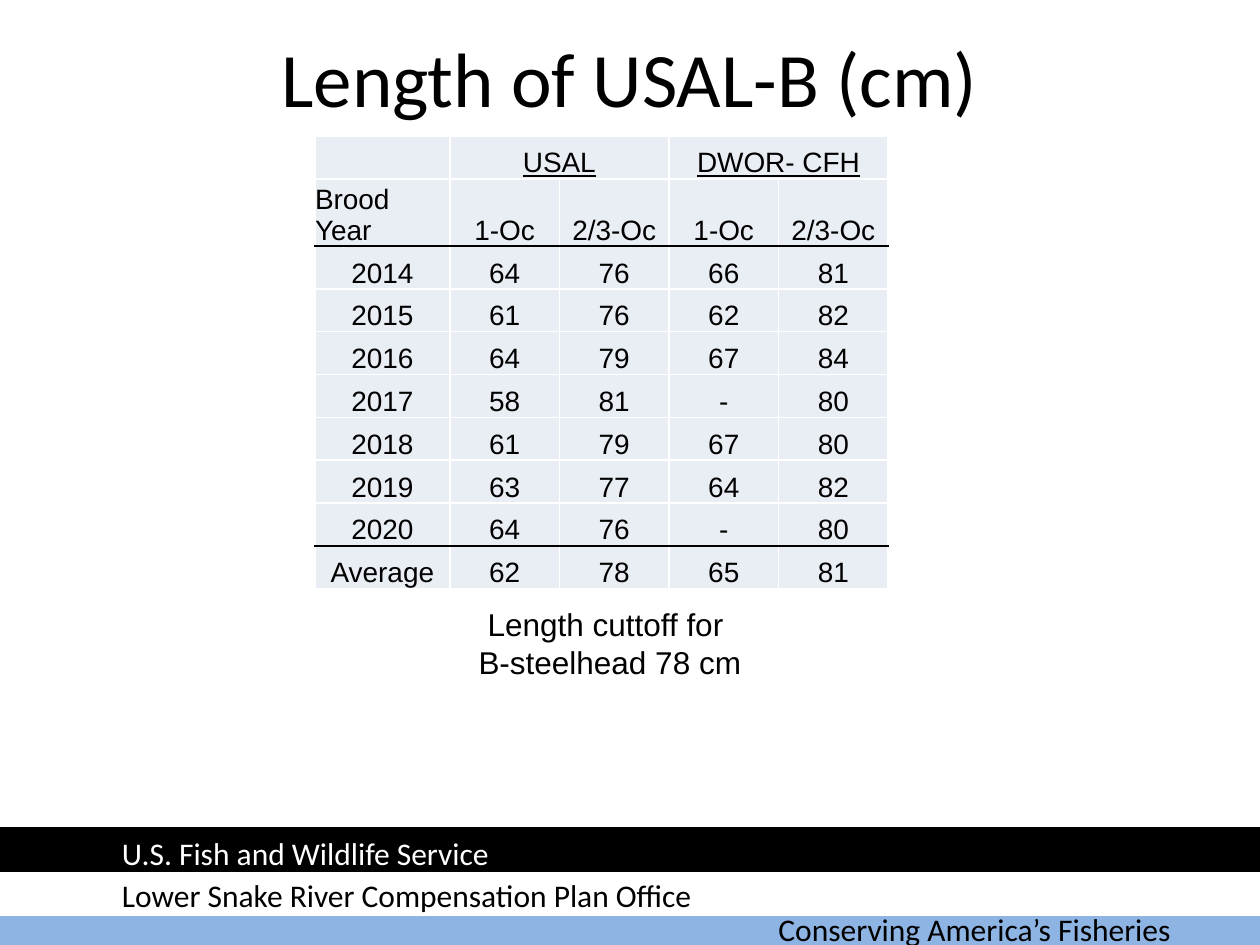
from lxml import etree
from pptx import Presentation
from pptx.dml.color import RGBColor
from pptx.enum.shapes import MSO_SHAPE
from pptx.enum.text import MSO_ANCHOR, PP_ALIGN
from pptx.oxml.ns import qn
from pptx.util import Inches, Pt

RECTANGLE = MSO_SHAPE.RECTANGLE
LEFT, CENTER = PP_ALIGN.LEFT, PP_ALIGN.CENTER
TOP, MIDDLE, BOTTOM = MSO_ANCHOR.TOP, MSO_ANCHOR.MIDDLE, MSO_ANCHOR.BOTTOM

BLACK, WHITE, BLUE, PALE = "000000", "FFFFFF", "8EB4E3", "E9EDF4"
HEADING_FONT, BODY_FONT = "Calibri", "Arial"

COLUMN_WIDTHS = [1.07] + [0.87] * 4
ROW_HEIGHT = 0.34
LENGTHS = [
    ["", "USAL", "", "DWOR- CFH", ""],
    ["Brood Year", "1-Oc", "2/3-Oc", "1-Oc", "2/3-Oc"],
    ["2014", "64", "76", "66", "81"],
    ["2015", "61", "76", "62", "82"],
    ["2016", "64", "79", "67", "84"],
    ["2017", "58", "81", "-", "80"],
    ["2018", "61", "79", "67", "80"],
    ["2019", "63", "77", "64", "82"],
    ["2020", "64", "76", "-", "80"],
    ["Average", "62", "78", "65", "81"],
]
RULED_ROWS = {1, len(LENGTHS) - 2}


def color(value):
    return RGBColor.from_string(value)


class SlideBuilder:
    """Draws styled elements on the current slide."""

    def __init__(self, slide):
        self.slide = slide

    def style(self, paragraph, size, font, ink, align, underline=None):
        paragraph.alignment = align
        paragraph.font.size = Pt(size)
        paragraph.font.name = font
        paragraph.font.color.rgb = color(ink)
        paragraph.font.underline = underline

    def band(self, left, top, shade):
        band = self.slide.shapes.add_shape(
            RECTANGLE, Inches(left), Inches(top), Inches(10), Inches(0.33))
        band.shadow.inherit = False
        band.fill.solid()
        band.fill.fore_color.rgb = color(shade)
        band.line.color.rgb = color(shade)
        band.line.width = Pt(2)

    def text(self, box, lines, size=18, font=HEADING_FONT, ink=BLACK,
             align=LEFT, anchor=TOP):
        frame = self.slide.shapes.add_textbox(*map(Inches, box)).text_frame
        frame.word_wrap = True
        frame.vertical_anchor = anchor
        frame.text = "\n".join(lines)
        for paragraph in frame.paragraphs:
            self.style(paragraph, size, font, ink, align)

    def border(self, cell, side, ink):
        line = etree.SubElement(cell._tc.get_or_add_tcPr(),
                                qn(f"a:ln{side}"), w=str(Pt(1)))
        fill = etree.SubElement(line, qn("a:solidFill"))
        etree.SubElement(fill, qn("a:srgbClr"), val=ink)

    def cell(self, cell, value, row):
        for side in "LRTB":
            ruled = (side == "B" and row in RULED_ROWS
                     or side == "T" and row - 1 in RULED_ROWS)
            self.border(cell, side, BLACK if ruled else WHITE)
        cell.fill.solid()
        cell.fill.fore_color.rgb = color(PALE)
        cell.margin_left = cell.margin_right = 0
        cell.margin_top = cell.margin_bottom = 0
        cell.vertical_anchor = BOTTOM
        cell.text = value
        align = LEFT if value == "Brood Year" else CENTER
        self.style(cell.text_frame.paragraphs[0], 16, BODY_FONT, BLACK,
                   align, underline=row == 0)

    def table(self, left, top, rows):
        table = self.slide.shapes.add_table(
            len(rows), len(COLUMN_WIDTHS), Inches(left), Inches(top),
            Inches(sum(COLUMN_WIDTHS)), Inches(ROW_HEIGHT * len(rows))).table
        table.first_row = table.horz_banding = False
        for column, width in zip(table.columns, COLUMN_WIDTHS):
            column.width = Inches(width)
        for r, values in enumerate(rows):
            table.rows[r].height = Inches(ROW_HEIGHT)
            for c, value in enumerate(values):
                self.cell(table.cell(r, c), value, r)
        for c in (1, 3):
            table.cell(0, c).merge(table.cell(0, c + 1))


def main():
    deck = Presentation()
    deck.slide_width, deck.slide_height = Inches(10), Inches(7.5)
    builder = SlideBuilder(deck.slides.add_slide(deck.slide_layouts[6]))

    builder.band(-0.01, 7.17, BLUE)
    builder.band(0, 6.93, WHITE)
    builder.band(0, 6.58, BLACK)
    builder.text((6.08, 7.17, 3.67, 0.4), ["Conserving America’s Fisheries"])
    builder.text((0.87, 6.57, 4.16, 0.4), ["U.S. Fish and Wildlife Service"],
                 ink=WHITE)
    builder.text((0.87, 6.9, 4.97, 0.4),
                 ["Lower Snake River Compensation Plan Office"])
    builder.text((0.5, 0.17, 9, 0.87), ["Length of USAL-B (cm)"], size=44,
                 align=CENTER, anchor=MIDDLE)
    builder.table(2.5, 1.08, LENGTHS)
    builder.text((2.65, 4.75, 4.38, 0.71),
                 ["Length cuttoff for ", "B-steelhead 78 cm"],
                 font=BODY_FONT, align=CENTER)
    deck.save("out.pptx")


if __name__ == "__main__":
    main()
